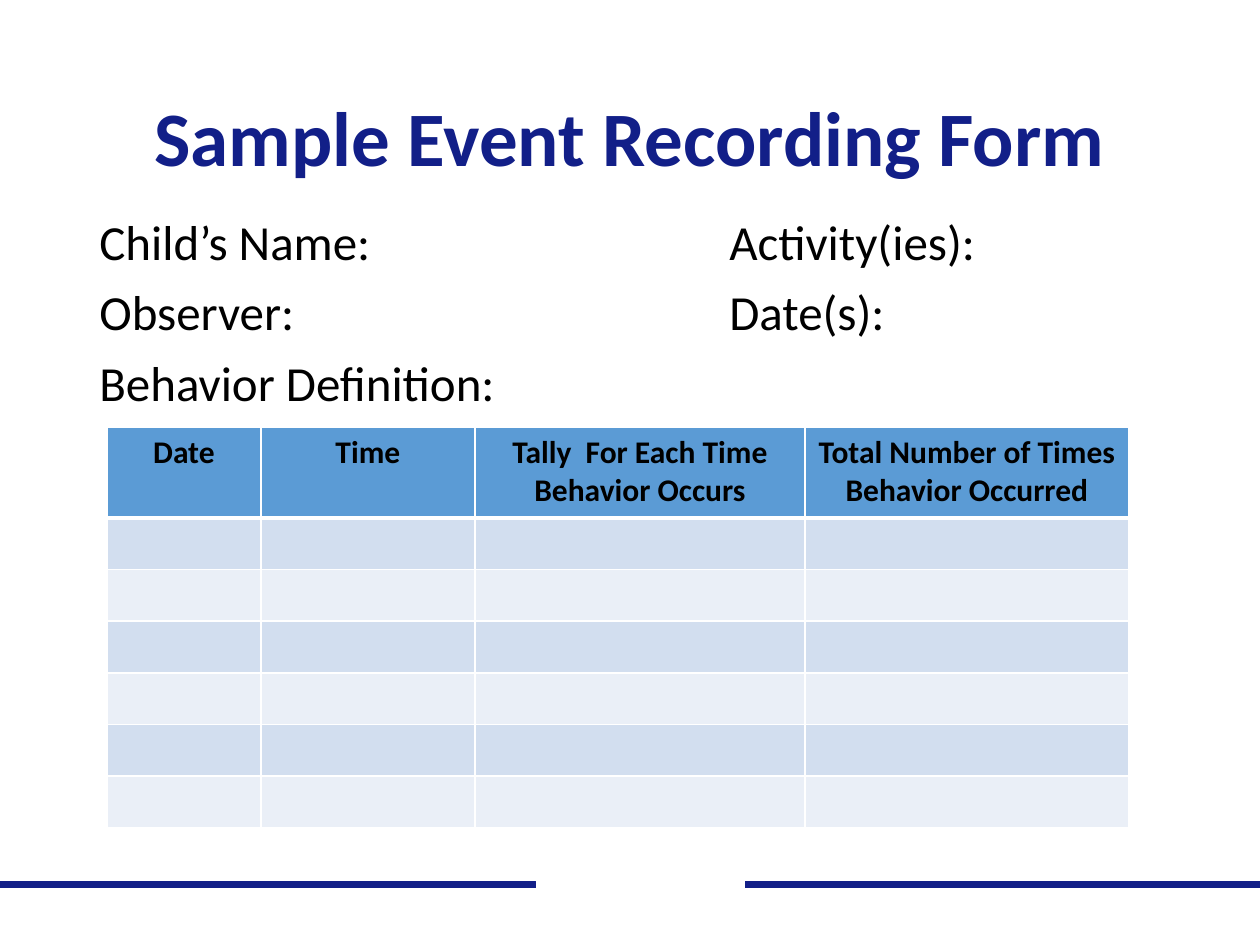
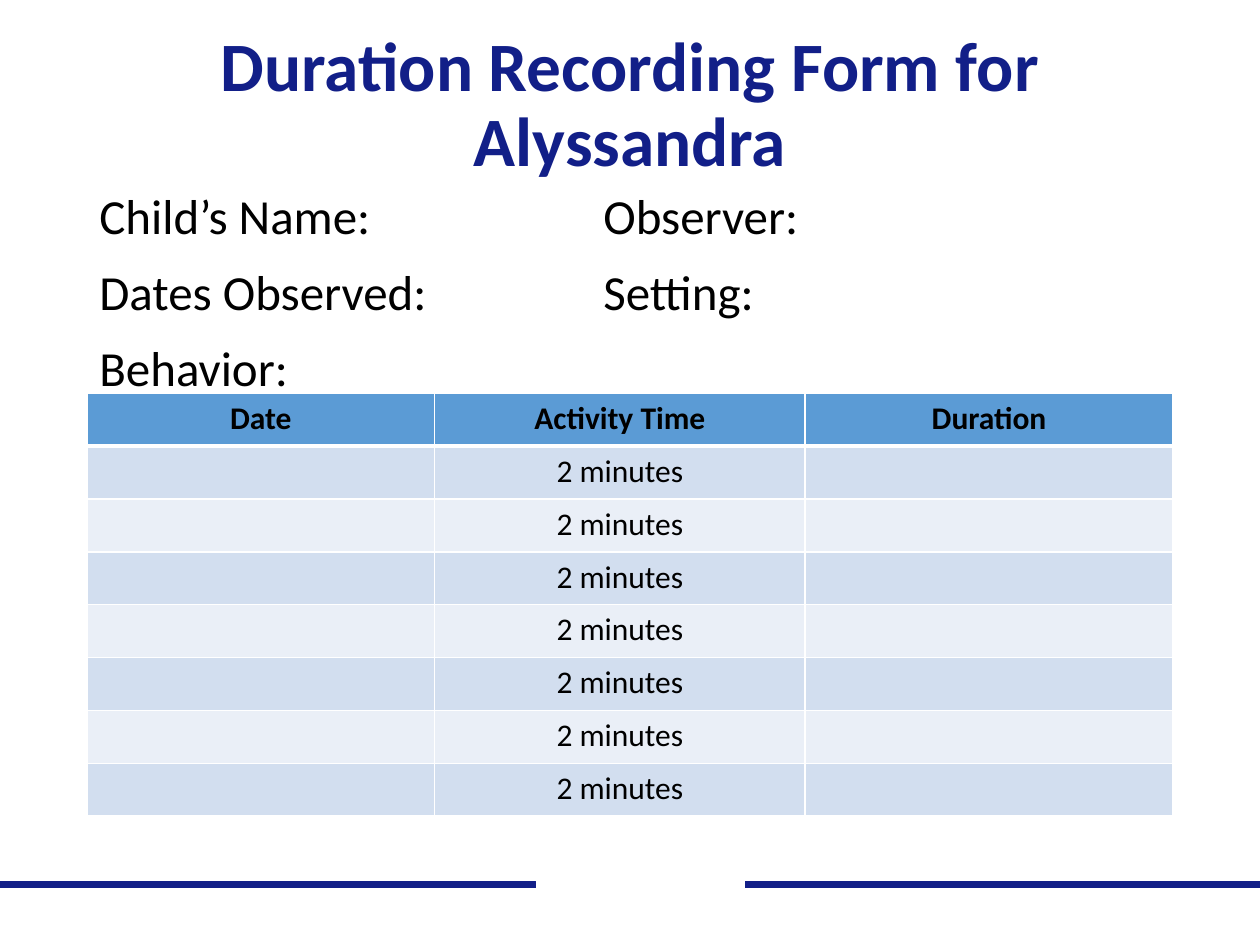
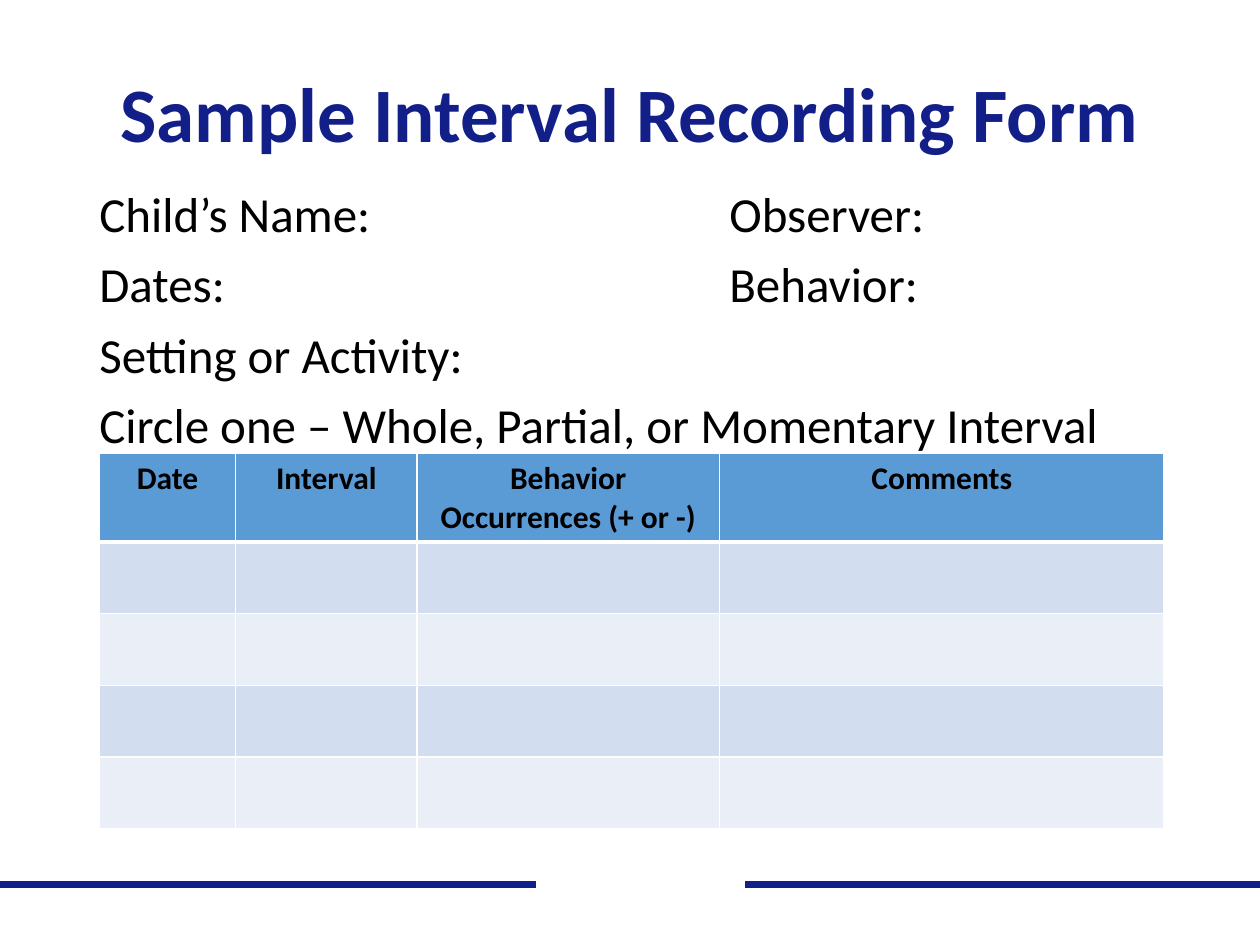
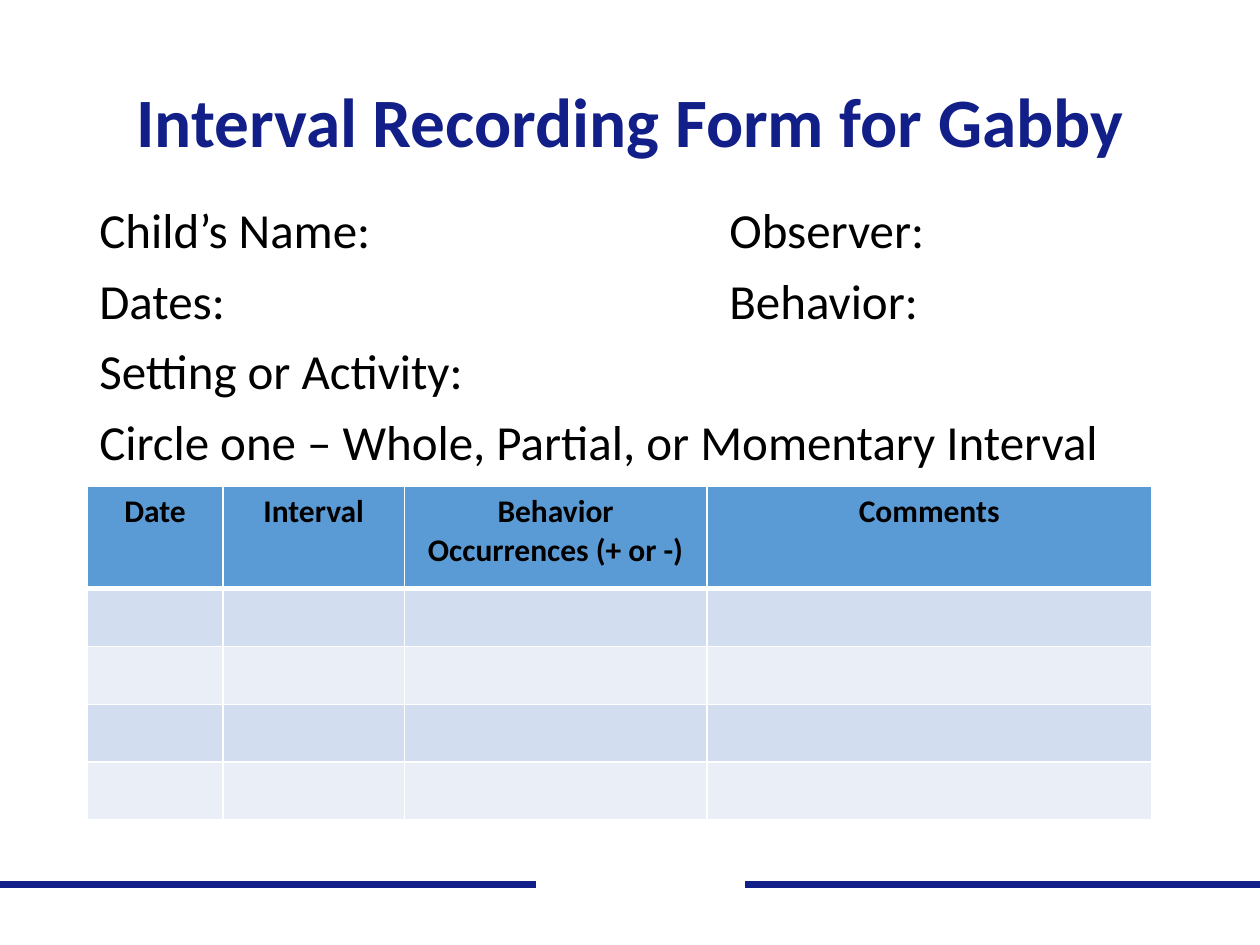
from lxml.etree import SubElement as Sub
from pptx import Presentation
from pptx.dml.color import RGBColor
from pptx.enum.shapes import MSO_CONNECTOR as Conn
from pptx.enum.text import MSO_ANCHOR as Anchor, PP_ALIGN as Align
from pptx.oxml.ns import qn
from pptx.util import Inches, Pt

# Shared look
NAVY, WHITE, BLACK = "121F88", "FFFFFF", "000000"
HEAD, BANDS = "5B9BD5", ("D2DEEF", "EAEFF7")
LEFT, WIDTH, FLOOR = 0.69, 8.62, 6.76
RULE_Y = 7.02
TITLE = {"size": Pt(44), "bold": True}
LONG = {**TITLE, "size": Pt(39.6)}
FIELD = {"size": Pt(28), "bold": False}
LABEL = {"size": Pt(18), "bold": True}
VALUE = {**LABEL, "bold": False}


def color(code):
    return RGBColor.from_string(code)


def write(para, text, form, ink=BLACK):
    font = para.add_run()
    font.text = text
    font = font.font
    for name, value in {"name": "Calibri", **form}.items():
        setattr(font, name, value)
    font.color.rgb = color(ink)


def add_box(slide, top, height):
    box = slide.shapes.add_textbox(*map(Inches, (LEFT, top, WIDTH, height)))
    box.text_frame.word_wrap = True
    return box.text_frame


def add_rule(slide, start, end, ink):
    line = slide.shapes.add_connector(
        Conn.STRAIGHT, *map(Inches, (start, RULE_Y, end, RULE_Y)))
    line.line.color.rgb = color(ink)
    line.line.width = Pt(4.5)
    Sub(line._element.spPr, qn("a:effectLst"))


def add_title(slide, text, top, height, form):
    frame = add_box(slide, top, height)
    frame.vertical_anchor = Anchor.MIDDLE
    para = frame.paragraphs[0]
    para.alignment = Align.CENTER
    para.line_spacing = 0.9
    write(para, text, form, NAVY)


def add_fields(slide, lines, top, tab, space):
    """Form fields; a tab stop lines up the right-hand column."""
    frame = add_box(slide, top, FLOOR - top)
    for i, text in enumerate(lines):
        para = frame.add_paragraph() if i else frame.paragraphs[0]
        if "\t" in text:
            tabs = Sub(para._p.get_or_add_pPr(), qn("a:tabLst"))
            Sub(tabs, qn("a:tab"), pos=str(Inches(tab)), algn="l")
        para.line_spacing = space
        para.space_before = Pt(10 if i else 0)
        write(para, text, FIELD)


def add_edges(cell, base):
    props = cell._tc.get_or_add_tcPr()
    for side, width in (("L", 1), ("R", 1), ("T", 1), ("B", base)):
        edge = Sub(props, qn(f"a:ln{side}"), w=str(Pt(width)))
        Sub(Sub(edge, qn("a:solidFill")), qn("a:srgbClr"), val=WHITE)


def add_grid(slide, rows, left, top, cols, head, step):
    """Table with a header row and banded body rows."""
    high = head + step * (len(rows) - 1)
    table = slide.shapes.add_table(
        len(rows), len(cols),
        *map(Inches, (left, top, sum(cols), high))).table
    for col, width in zip(table.columns, cols):
        col.width = Inches(width)
    for r, row in enumerate(rows):
        table.rows[r].height = Inches(step if r else head)
        for c, text in enumerate(row):
            cell = table.cell(r, c)
            add_edges(cell, 1 if r else 3)
            cell.fill.solid()
            cell.fill.fore_color.rgb = color(BANDS[(r - 1) % 2] if r else HEAD)
            if text:
                para = cell.text_frame.paragraphs[0]
                para.alignment = Align.CENTER
                write(para, text, VALUE if r else LABEL)


def add_form(deck, title, fields, grid):
    slide = deck.slides.add_slide(deck.slide_layouts[6])
    add_rule(slide, 0, 10, NAVY)
    add_rule(slide, 4.25, 5.91, WHITE)
    add_title(slide, *title)
    add_fields(slide, *fields)
    add_grid(slide, *grid)


def main():
    deck = Presentation()
    deck.slide_width, deck.slide_height = Inches(10), Inches(7.5)

    # Event recording
    heads = ["Date", "Time", "Tally  For Each Time Behavior Occurs",
             "Total Number of Times Behavior Occurred"]
    add_form(
        deck, ("Sample Event Recording Form", 0.4, 1.45, TITLE),
        (["Child’s Name:\tActivity(ies):", "Observer:\tDate(s):",
          "Behavior Definition:"], 1.68, 5, 0.9),
        ([heads] + [[""] * 4] * 6, 0.85, 3.39,
         (1.22, 1.7, 2.62, 2.57), 0.72, 0.41))

    # Duration recording
    heads = ["Date", "Activity Time", "Duration"]
    add_form(
        deck, ("Duration Recording Form for Alyssandra", 0.19, 1.31, LONG),
        (["Child’s Name:\tObserver:", "Dates Observed:\tSetting:",
          "Behavior:"], 1.42, 4, 1.0),
        ([heads] + [["", "2 minutes", ""]] * 7, LEFT, 3.12,
         (2.76, 2.94, 2.92), 0.42, 0.42))

    # Interval recording: blank sample, then Gabby's form
    lines = ["Child’s Name:\tObserver:", "Dates:\tBehavior:",
             "Setting or Activity:",
             "Circle one – Whole, Partial, or Momentary Interval"]
    heads = ["Date", "Interval", "Behavior Occurrences (+ or -)", "Comments"]
    rows = [heads] + [[""] * 4] * 4
    cols = (1.08, 1.44, 2.4, 3.53)
    add_form(
        deck, ("Sample Interval Recording Form", 0.4, 1.06, TITLE),
        (lines, 1.46, 5, 0.9), (rows, 0.79, 3.6, cols, 0.68, 0.57))
    add_form(
        deck, ("Interval Recording Form for Gabby", 0.4, 1.19, LONG),
        (lines, 1.59, 5, 0.9), (rows, LEFT, 3.86, cols, 0.81, 0.46))

    deck.save("out.pptx")


if __name__ == "__main__":
    main()
